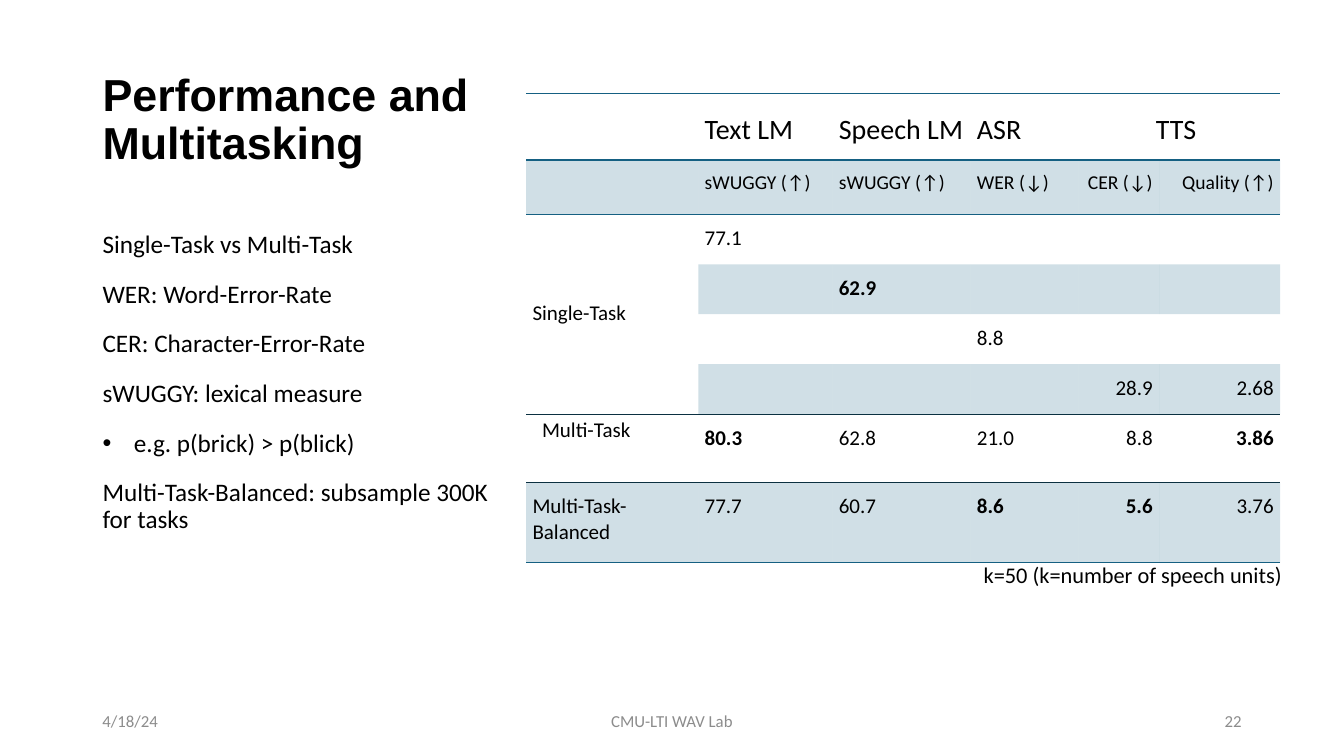
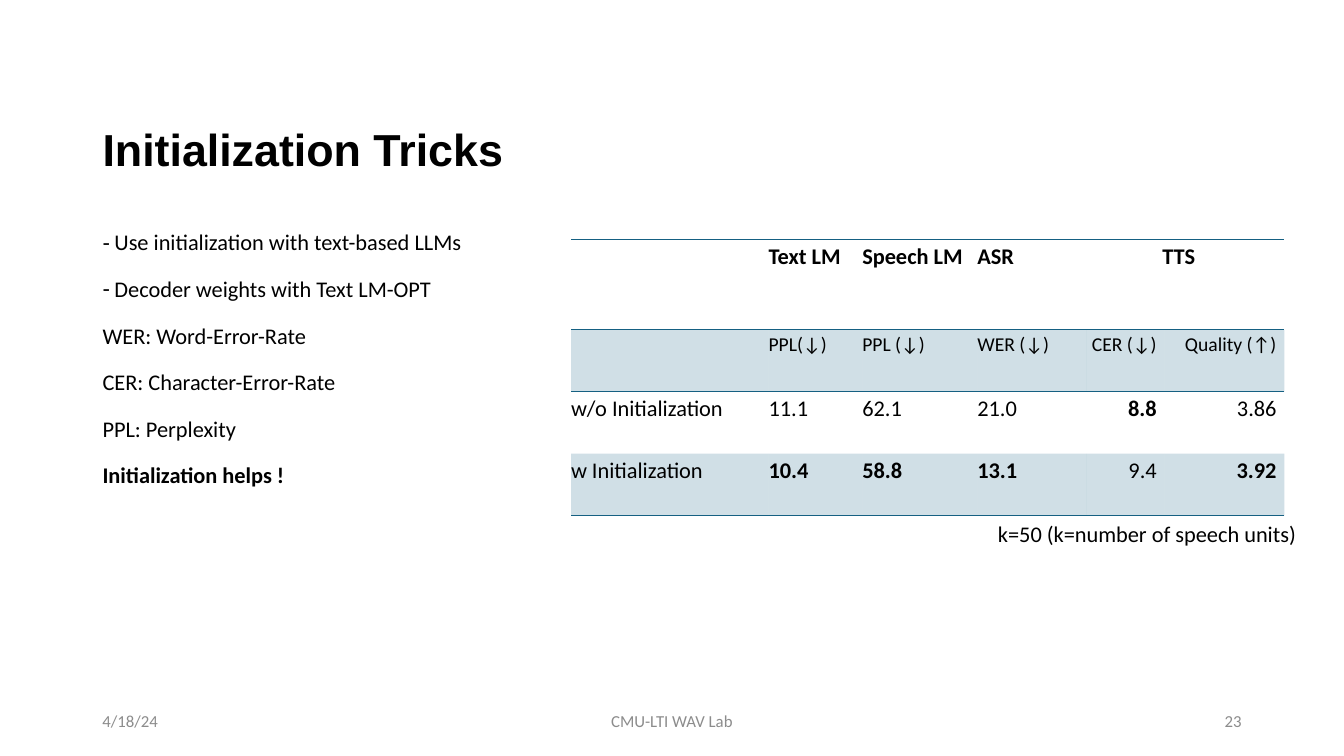
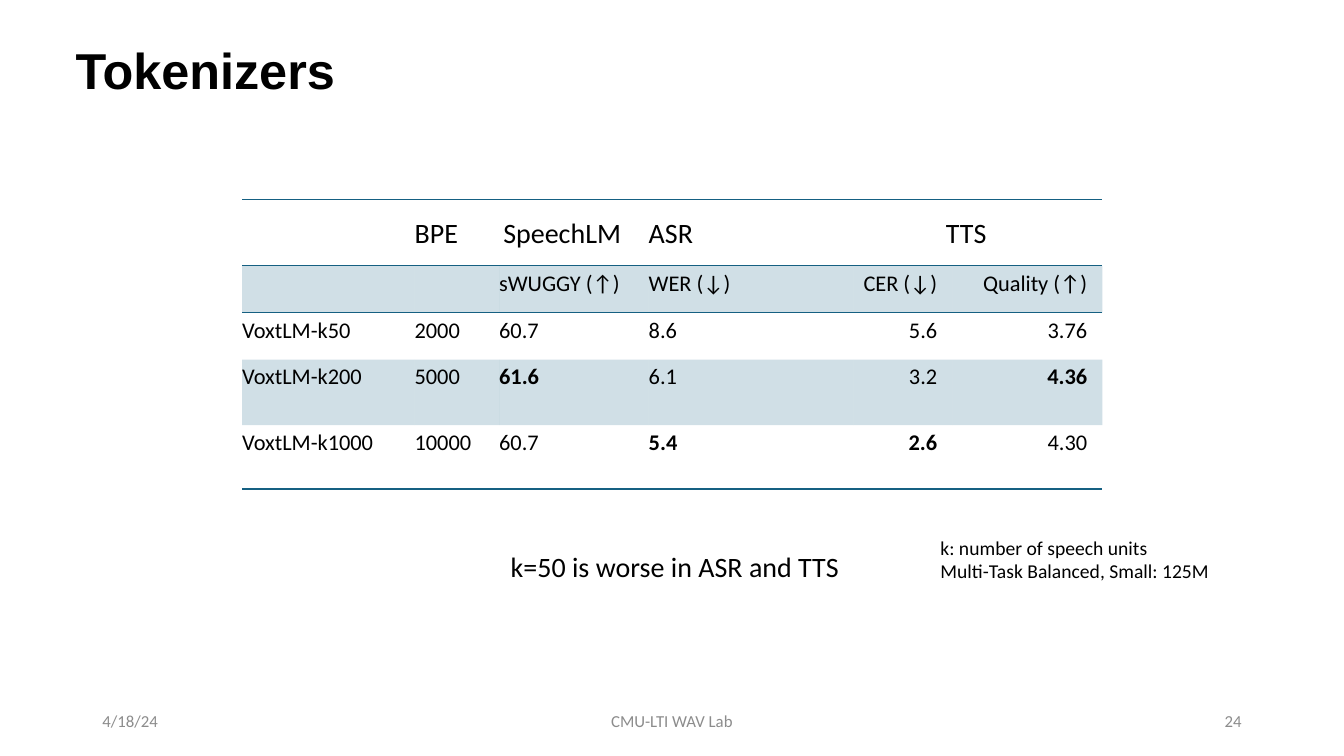
from lxml.etree import SubElement
from pptx import Presentation
from pptx.dml.color import RGBColor
from pptx.enum.text import MSO_ANCHOR, MSO_AUTO_SIZE, PP_ALIGN
from pptx.oxml.ns import qn
from pptx.util import Cm, Pt

BLACK, GREY, TEAL, NAVY = "000000", "8C8C8C", "156082", "0B3041"
SANS, BODY = "Arial", "Calibri"
LEFT, MID, RIGHT = PP_ALIGN.LEFT, PP_ALIGN.CENTER, PP_ALIGN.RIGHT
PLAIN = "{2D5ABB26-0587-4C30-8999-92F81FD0307C}"
BOLD = "*"
FIRST = 22
FOOTS = [
    ("4/18/24", (2.33, 7.62), LEFT),
    ("CMU-LTI WAV Lab", (11.22, 11.43), MID),
    ("{page}", (23.92, 7.62), RIGHT),
]
LIST = (2.33, 5.71, 10.92, 10.59)
UNITS = "k=50 (k=number of speech units)"

SLIDES = [
    dict(
        title="Performance and Multitasking", place=(2.33, 1.27, 10.92, 3.13), size=32,
        points=[
            ("", "Single-Task vs Multi-Task"),
            ("", "WER: Word-Error-Rate"),
            ("", "CER: Character-Error-Rate"),
            ("", "sWUGGY: lexical measure"),
            ("•", "e.g. p(brick) > p(blick)"),
            ("", "Multi-Task-Balanced: subsample 300K for tasks"),
        ],
        type=18, hang=0.79,
        grid=dict(
            at=(13.26, 2.36),
            cols=[4.34, 3.38, 3.48, 2.72, 2.03, 3.05],
            rows=[1.67, 1.37] + [1.25] * 4 + [1.73, 2.01],
            sizes=(20, 14, 15), anchor=MSO_ANCHOR.BOTTOM, mids=[4],
            pads=[(0.16, 0.28, 0.16, 0.33)] * 2,
            rules={0: TEAL, 1: TEAL, 6: NAVY, 8: TEAL},
            cells=[
                ["", "Text LM", "Speech LM", "ASR", "TTS ", ""],
                ["", "sWUGGY (↑)", "sWUGGY (↑)", "WER (↓)", "CER (↓)", "Quality (↑)"],
                ["Single-Task", "77.1", "", "", "", ""],
                ["", "", "*62.9", "", "", ""],
                ["", "", "", "8.8", "", ""],
                ["", "", "", "", "28.9", "2.68"],
                ["Multi-Task", "*80.3", "62.8", "21.0", "8.8", "*3.86"],
                ["Multi-Task-Balanced", "77.7", "60.7", "*8.6", "*5.6", "3.76"],
            ],
            tall=(2, 5), inset=(6, 0.4, 0.08),
        ),
        notes=[([UNITS], (24.54, 14.02, 8.3, 0.94), 16)],
    ),
    dict(
        title="Initialization Tricks", place=(2.33, 1.27, 10.92, 3.3), size=32,
        points=[
            ("-", "Use initialization with text-based LLMs"),
            ("-", "Decoder weights with Text LM-OPT"),
            ("", "WER: Word-Error-Rate"),
            ("", "CER: Character-Error-Rate"),
            ("", "PPL: Perplexity"),
            ("", "*Initialization helps !"),
        ],
        type=16, hang=0.3,
        grid=dict(
            at=(14.39, 6.04),
            cols=[4.98, 2.36, 2.9, 2.74, 1.98, 3.02],
            rows=[2.27] + [1.56] * 3,
            sizes=(16, 14, 16), anchor=MSO_ANCHOR.TOP, mids=[4],
            pads=[(0, 0.08, 0.2, 0.64)] * 2,
            rules={0: TEAL, 1: TEAL, 4: TEAL},
            cells=[
                ["", "*Text LM", "*Speech LM", "*ASR", "*TTS ", ""],
                ["", "PPL(↓)", "PPL (↓)", "WER (↓)", "CER (↓)", "Quality (↑)"],
                ["w/o Initialization", "11.1", "62.1", "21.0", "*8.8", "3.86"],
                ["w Initialization", "*10.4", "*58.8", "*13.1", "9.4", "*3.92"],
            ],
        ),
        notes=[([UNITS], (24.9, 12.98, 8.3, 0.94), 16)],
    ),
    dict(
        title="Tokenizers", place=(1.65, 0.25, 27.18, 2.41), size=36,
        grid=dict(
            at=(6.1, 5.03),
            cols=[4.35, 2.13, 3.77, 5.16, 2.49, 3.78],
            rows=[1.67, 1.18, 1.18, 1.65, 1.61],
            sizes=(20, 16, 16), anchor=MSO_ANCHOR.BOTTOM, mids=[2, 4],
            pads=[(0, 0.08, 0.43, 0.38), (0, 0.1, 0.38, 0.38)],
            rules={0: TEAL, 1: TEAL, 5: TEAL},
            cells=[
                ["", "BPE", "SpeechLM ", "ASR", "TTS ", ""],
                ["", "", "sWUGGY (↑)", "WER (↓)", "CER (↓)", "Quality (↑)"],
                ["VoxtLM-k50", "2000", "60.7", "8.6", "5.6", "3.76"],
                ["VoxtLM-k200", "5000", "*61.6", "6.1", "3.2", "*4.36"],
                ["VoxtLM-k1000", "10000", "60.7", "*5.4", "*2.6", "4.30"],
            ],
        ),
        notes=[
            (["k=50 is worse in ASR and TTS"], (12.62, 13.72, 10.85, 1.12), 20),
            (["k: number of speech units", "Multi-Task Balanced, Small: 125M"],
             (23.45, 13.37, 7.7, 1.45), 14),
        ],
    ),
]


def color(code):
    return RGBColor.from_string(code)


def write(para, text, size, tint=BLACK, face=BODY, align=LEFT):
    para.text = text.removeprefix(BOLD)
    para.alignment = align
    for run in para.runs:
        run.font.size, run.font.name = Pt(size), face
        run.font.bold = text.startswith(BOLD)
        run.font.color.rgb = color(tint)


def move(shape, place):
    shape.left, shape.top, shape.width, shape.height = map(Cm, place)


def setup(frame, anchor):
    frame.word_wrap = True
    frame.auto_size = MSO_AUTO_SIZE.NONE
    frame.vertical_anchor = anchor


def fill_lines(frame, lines):
    for i, line in enumerate(lines):
        yield i, frame.paragraphs[0] if i == 0 else frame.add_paragraph(), line


def add_box(slide, lines, place, size, tint=BLACK, align=LEFT, anchor=MSO_ANCHOR.TOP):
    frame = slide.shapes.add_textbox(*map(Cm, place)).text_frame
    setup(frame, anchor)
    for _, para, line in fill_lines(frame, lines):
        write(para, line, size, tint, align=align)


def add_foot(slide, page):
    for text, (left, width), align in FOOTS:
        add_box(slide, [text.format(page=page)], (left, 17.65, width, 1.02), 12,
                GREY, align, MSO_ANCHOR.MIDDLE)


def add_title(slide, data):
    title = slide.shapes.title
    move(title, data["place"])
    setup(title.text_frame, MSO_ANCHOR.BOTTOM)
    para = title.text_frame.paragraphs[0]
    write(para, BOLD + data["title"], data["size"], face=SANS)
    para.line_spacing = 0.9


def add_list(slide, data):
    body = slide.placeholders[1]
    move(body, LIST)
    setup(body.text_frame, MSO_ANCHOR.TOP)
    for i, para, (mark, text) in fill_lines(body.text_frame, data["points"]):
        hang = Cm(data["hang"]) if mark else 0
        props = para._p.get_or_add_pPr()
        props.set("marL", str(hang))
        props.set("indent", str(-hang))
        if mark:
            SubElement(props, qn("a:buChar")).set("char", mark)
        else:
            SubElement(props, qn("a:buNone"))
        para.line_spacing = 0.9
        para.space_before, para.space_after = Pt(10 if i else 0), Pt(6)
        write(para, text, data["type"])


def add_rule(cell, side, tint):
    line = SubElement(cell._tc.get_or_add_tcPr(), qn("a:" + side), w=str(Pt(1)))
    solid = SubElement(line, qn("a:solidFill"))
    SubElement(solid, qn("a:srgbClr"), val=tint)


def shade(cell, band):
    if not band:
        cell.fill.background()
        return
    cell.fill.solid()
    cell.fill.fore_color.rgb = color(TEAL)
    tint = cell._tc.tcPr.find(qn("a:solidFill")).find(qn("a:srgbClr"))
    SubElement(tint, qn("a:alpha")).set("val", "20000")


def pad(cell, sides):
    (cell.margin_left, cell.margin_top,
     cell.margin_right, cell.margin_bottom) = map(Cm, sides)


def add_grid(slide, grid):
    cols, rows, rules = grid["cols"], grid["rows"], grid["rules"]
    shape = slide.shapes.add_table(
        len(rows), len(cols), *map(Cm, (*grid["at"], sum(cols), sum(rows))))
    shape.element.xpath(".//a:tableStyleId")[0].text = PLAIN
    table = shape.table
    table.first_row = table.horz_banding = False
    for col, width in zip(table.columns, cols):
        col.width = Cm(width)
    for row, height in zip(table.rows, rows):
        row.height = Cm(height)
    for r, texts in enumerate(grid["cells"]):
        for c, text in enumerate(texts):
            cell = table.cell(r, c)
            for side, edge in (("lnT", r), ("lnB", r + 1)):
                if edge in rules:
                    add_rule(cell, side, rules[edge])
            shade(cell, r % 2)
            if not text:
                continue
            pad(cell, grid["pads"][min(r, 1)])
            cell.vertical_anchor = MSO_ANCHOR.TOP if r else grid["anchor"]
            if r:
                align = RIGHT if c >= 4 else LEFT
            else:
                align = MID if c in grid["mids"] else LEFT
            write(cell.text_frame.paragraphs[0], text, grid["sizes"][min(r, 2)], align=align)
    table.cell(0, 4).merge(table.cell(0, 5))
    if "tall" in grid:
        top, end = grid["tall"]
        table.cell(top, 0).merge(table.cell(end, 0))
        table.cell(top, 0).vertical_anchor = MSO_ANCHOR.MIDDLE
        r, left, above = grid["inset"]
        cell = table.cell(r, 0)
        cell.margin_left, cell.margin_top = Cm(left), Cm(above)


def main():
    deck = Presentation()
    deck.slide_width, deck.slide_height = Cm(33.87), Cm(19.05)
    for page, data in enumerate(SLIDES, FIRST):
        slide = deck.slides.add_slide(deck.slide_layouts[1 if "points" in data else 5])
        add_foot(slide, page)
        add_title(slide, data)
        if "points" in data:
            add_list(slide, data)
        add_grid(slide, data["grid"])
        for lines, place, size in data["notes"]:
            add_box(slide, lines, place, size)
    deck.save("out.pptx")


if __name__ == "__main__":
    main()
